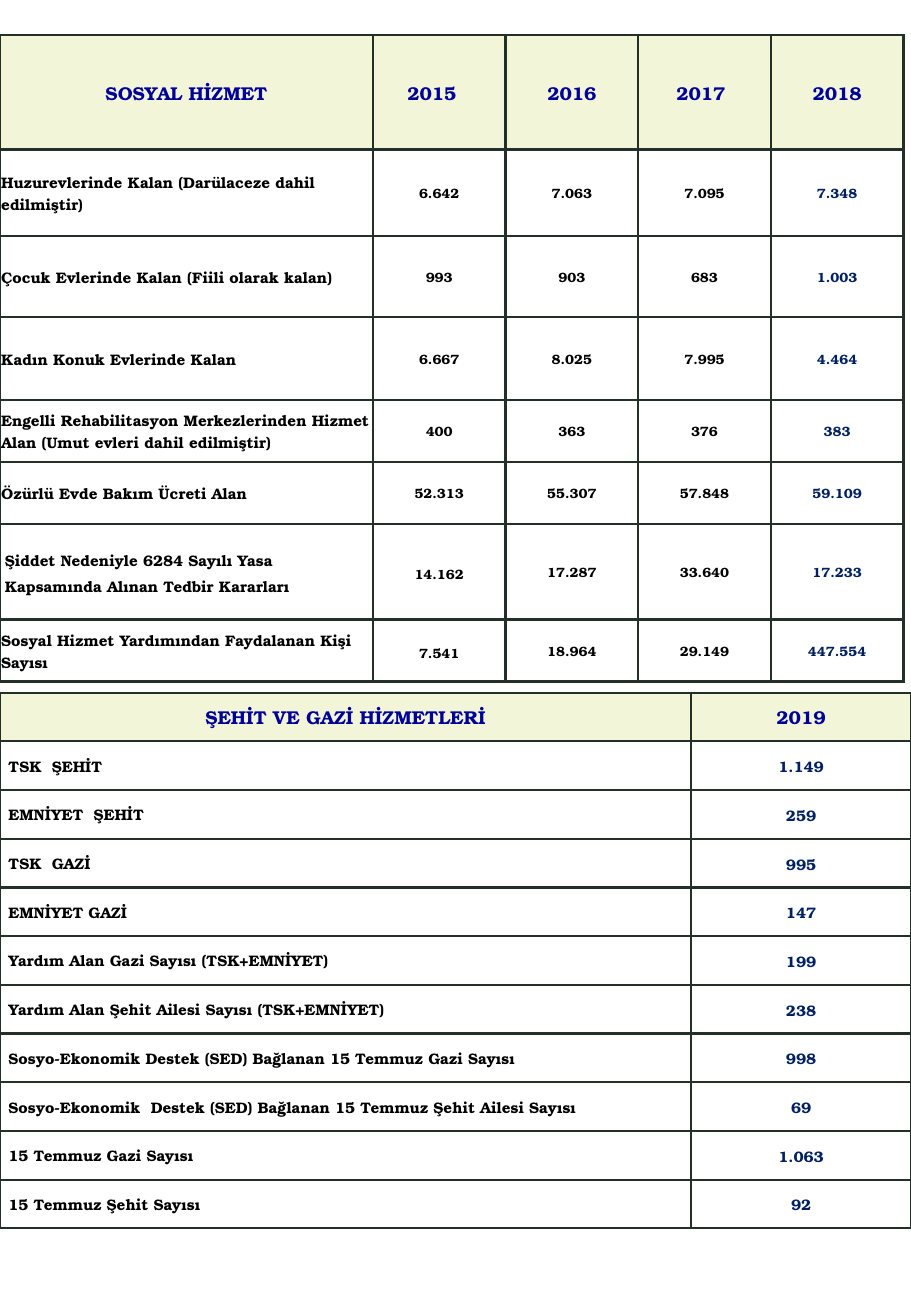
from dataclasses import dataclass

from lxml.etree import SubElement
from pptx import Presentation
from pptx.dml.color import RGBColor as Rgb
from pptx.enum.text import MSO_ANCHOR as Anchor, PP_ALIGN as Align
from pptx.oxml.ns import qn
from pptx.util import Inches, Pt

GRID_COLUMNS, GRID_ROWS = 750, 1083


@dataclass(frozen=True)
class Theme:
    font: str = "TeX Gyre Bonum"
    heading: str = "000099"
    label: str = "000000"
    latest: str = "002060"
    header_fill: str = "F2F5D8"
    body_fill: str = "FFFFFF"
    border: str = "223028"
    border_width: float = 1.5
    heading_size: float = 11
    label_size: float = 9
    figure_size: float = 8
    tight: tuple = (1, 1, 1, 0)
    padded: tuple = (4, 0, 4, 0)
    roomy: tuple = (7, 4, 7, 4)


class Page:
    def __init__(self, deck, theme):
        self.theme = theme
        self.slide = deck.slides.add_slide(deck.slide_layouts[6])
        self.column = deck.slide_width / GRID_COLUMNS
        self.row = deck.slide_height / GRID_ROWS

    def across(self, columns):
        return round(columns * self.column)

    def down(self, rows):
        return round(rows * self.row)

    def table(self, top, widths, heights):
        frame = self.slide.shapes.add_table(
            len(heights), len(widths), 0, self.down(top),
            self.across(sum(widths)), self.down(sum(heights)))
        grid = frame.table
        grid.first_row = grid.horz_banding = False
        for column, width in zip(grid.columns, widths):
            column.width = self.across(width)
        for row, height in zip(grid.rows, heights):
            row.height = self.down(height)
        return grid

    def borders(self, cell):
        properties = cell._tc.get_or_add_tcPr()
        for side in ("a:lnL", "a:lnR", "a:lnT", "a:lnB"):
            line = SubElement(properties, qn(side), w=str(Pt(self.theme.border_width)))
            fill = SubElement(line, qn("a:solidFill"))
            SubElement(fill, qn("a:srgbClr"), val=self.theme.border)

    def cell(self, cell, text, size, color, fill, insets, align=Align.CENTER, spacing=None):
        self.borders(cell)
        cell.fill.solid()
        cell.fill.fore_color.rgb = Rgb.from_string(fill)
        cell.vertical_anchor = Anchor.MIDDLE
        left, top, right, bottom = insets
        cell.margin_left, cell.margin_right = self.across(left), self.across(right)
        cell.margin_top, cell.margin_bottom = self.down(top), self.down(bottom)
        paragraph = cell.text_frame.paragraphs[0]
        paragraph.alignment = align
        if spacing:
            paragraph.line_spacing = spacing
        run = paragraph.add_run()
        run.text = text
        run.font.name, run.font.size, run.font.bold = self.theme.font, Pt(size), True
        run.font.color.rgb = Rgb.from_string(color)

    def heading(self, cell, text, insets):
        self.cell(cell, text, self.theme.heading_size, self.theme.heading,
                  self.theme.header_fill, insets)

    def label(self, cell, text, insets, spacing=None):
        self.cell(cell, text, self.theme.label_size, self.theme.label,
                  self.theme.body_fill, insets, Align.LEFT, spacing)

    def figure(self, cell, text, size, latest, spacing=None):
        color = self.theme.latest if latest else self.theme.label
        self.cell(cell, text, size, color, self.theme.body_fill,
                  self.theme.tight, spacing=spacing)


SOCIAL_HEADINGS = ["SOSYAL HİZMET", "2015", "2016", "2017", "2018"]
HEADING_SHIFTS = [0, 12, 0, 6, 0]
SOCIAL_HEIGHTS = [94, 71, 67, 68, 51, 51, 79, 51]
SOCIAL_SERVICES = [
    ("Huzurevlerinde Kalan (Darülaceze dahil edilmiştir)", "6.642", "7.063", "7.095", "7.348"),
    ("Çocuk Evlerinde Kalan (Fiili olarak kalan)", "993", "903", "683", "1.003"),
    ("Kadın Konuk Evlerinde Kalan", "6.667", "8.025", "7.995", "4.464"),
    ("Engelli Rehabilitasyon Merkezlerinden Hizmet Alan (Umut evleri dahil edilmiştir)",
     "400", "363", "376", "383"),
    ("Özürlü Evde Bakım Ücreti Alan", "52.313", "55.307", "57.848", "59.109"),
    ("Şiddet Nedeniyle 6284 Sayılı Yasa Kapsamında Alınan Tedbir Kararları",
     "14.162", "17.287", "33.640", "17.233"),
    ("Sosyal Hizmet Yardımından Faydalanan Kişi Sayısı",
     "7.541", "18.964", "29.149", "447.554"),
]
VIOLENCE_ROW, AID_ROW = 6, 7
LOOSE_SPACING = {(VIOLENCE_ROW, 0): 1.15, (VIOLENCE_ROW, 1): 1.15, (AID_ROW, 1): 1.15}

VETERAN_HEADINGS = ["ŞEHİT VE GAZİ HİZMETLERİ", "2019"]
VETERAN_SERVICES = [
    ("TSK  ŞEHİT", "1.149"),
    ("EMNİYET  ŞEHİT", "259"),
    ("TSK  GAZİ", "995"),
    ("EMNİYET GAZİ", "147"),
    ("Yardım Alan Gazi Sayısı (TSK+EMNİYET)", "199"),
    ("Yardım Alan Şehit Ailesi Sayısı (TSK+EMNİYET)", "238"),
    ("Sosyo-Ekonomik Destek (SED) Bağlanan 15 Temmuz Gazi Sayısı", "998"),
    ("Sosyo-Ekonomik  Destek (SED) Bağlanan 15 Temmuz Şehit Ailesi Sayısı", "69"),
    ("15 Temmuz Gazi Sayısı", "1.063"),
    ("15 Temmuz Şehit Sayısı", "92"),
]


def social_services(page):
    theme = page.theme
    years = len(SOCIAL_HEADINGS) - 1
    grid = page.table(29, [307] + [437 / years] * years, SOCIAL_HEIGHTS)
    for place, (text, shift) in enumerate(zip(SOCIAL_HEADINGS, HEADING_SHIFTS)):
        left, top, right, bottom = theme.tight
        page.heading(grid.cell(0, place), text, (left, top, right + shift, bottom))
    for line, (service, *counts) in enumerate(SOCIAL_SERVICES, 1):
        insets = theme.padded if line == VIOLENCE_ROW else theme.tight
        page.label(grid.cell(line, 0), service, insets, LOOSE_SPACING.get((line, 0)))
        for year, count in enumerate(counts, 1):
            page.figure(grid.cell(line, year), count, theme.figure_size,
                        year == years, LOOSE_SPACING.get((line, year)))


def veteran_services(page):
    theme = page.theme
    lines = len(VETERAN_SERVICES) + 1
    grid = page.table(570, [569, 181], [441 / lines] * lines)
    for place, text in enumerate(VETERAN_HEADINGS):
        page.heading(grid.cell(0, place), text, theme.roomy)
    for line, (service, count) in enumerate(VETERAN_SERVICES, 1):
        page.label(grid.cell(line, 0), service, theme.roomy)
        page.figure(grid.cell(line, 1), count, theme.label_size, True)


def main():
    deck = Presentation()
    deck.slide_width, deck.slide_height = Inches(7.5), Inches(10.83)
    page = Page(deck, Theme())
    social_services(page)
    veteran_services(page)
    deck.save("out.pptx")


if __name__ == "__main__":
    main()
